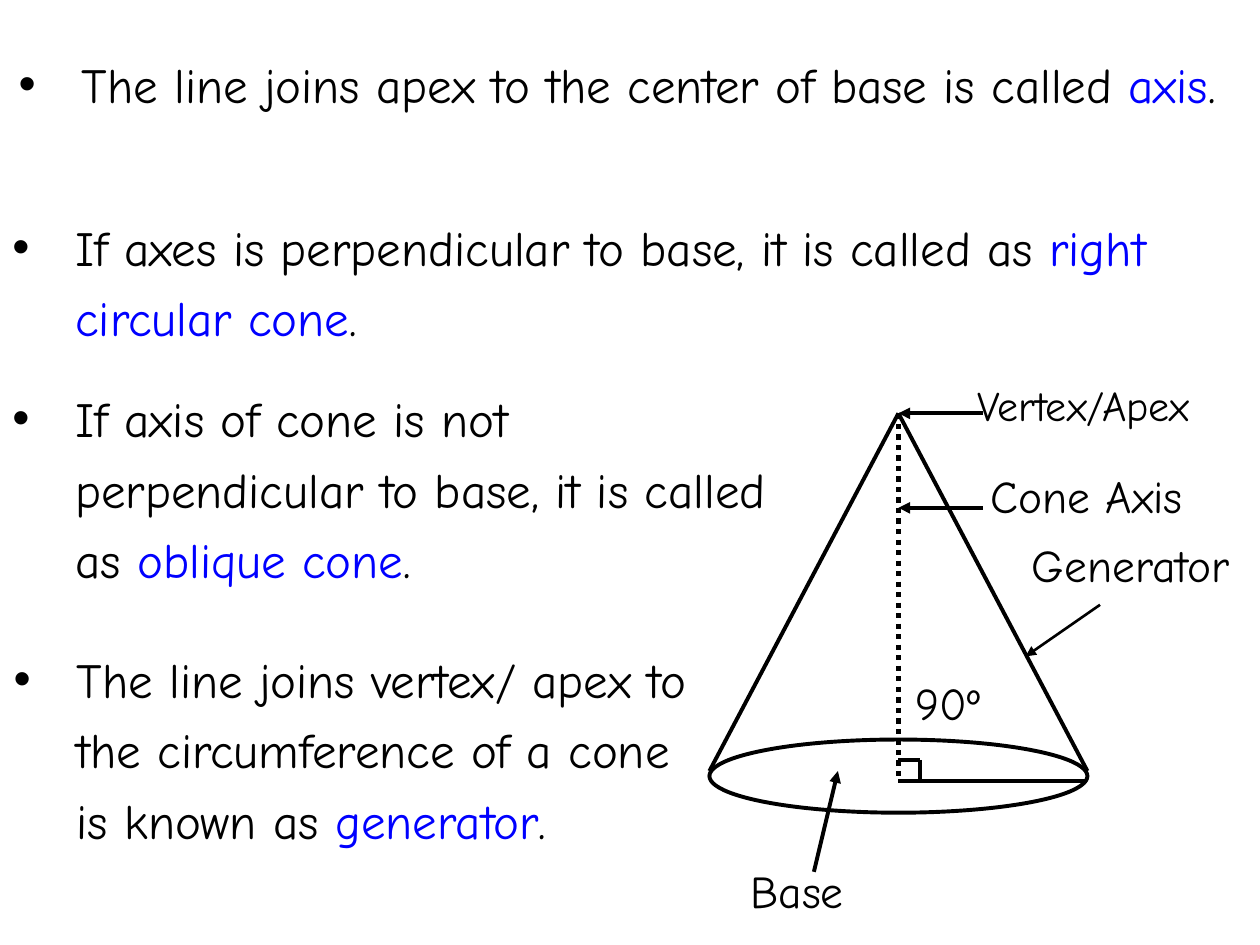
import pptx
import pptx.util
import pptx.dml.color
import pptx.enum.dml
import pptx.enum.shapes
import pptx.enum.text
import pptx.oxml.ns
import lxml.etree

Pt = pptx.util.Pt
BLACK = pptx.dml.color.RGBColor(0, 0, 0)
BLUE = pptx.dml.color.RGBColor(0, 0, 255)
FONT = "Comic Neue"
LEFT = pptx.enum.text.PP_ALIGN.LEFT
CENTER = pptx.enum.text.PP_ALIGN.CENTER

deck = pptx.Presentation()
deck.slide_width, deck.slide_height = Pt(720), Pt(540)
slide = deck.slides.add_slide(deck.slide_layouts[6])


def add_text(box, size, parts, align=LEFT):
    """Add a one-paragraph text box; parts are (text, colour) pairs."""
    frame = slide.shapes.add_textbox(*map(Pt, box)).text_frame
    frame.word_wrap = True
    frame.auto_size = pptx.enum.text.MSO_AUTO_SIZE.SHAPE_TO_FIT_TEXT
    para = frame.paragraphs[0]
    para.alignment = align
    para.font.name, para.font.size = FONT, Pt(size)
    for text, color in parts:
        run = para.add_run()
        run.text = text
        run.font.color.rgb = color
    return para


def add_line(start, end, width=2.25, arrow=False):
    line = slide.shapes.add_connector(
        pptx.enum.shapes.MSO_CONNECTOR.STRAIGHT, *map(Pt, start + end))
    line.line.color.rgb = BLACK
    line.line.width = Pt(width)
    if arrow:
        lxml.etree.SubElement(line.line._get_or_add_ln(),
                              pptx.oxml.ns.qn("a:tailEnd"), type="triangle")
    lxml.etree.SubElement(line._element.spPr, pptx.oxml.ns.qn("a:effectLst"))
    return line


# Bulleted statements, each ending in a blue term
points = [
    ((3.6, 20.9, 702, 87.8),
     "The line joins apex to the center of base is called ", "axis"),
    ((0, 113.8, 702, 87.8),
     "If axes is perpendicular to base, it is called as ",
     "right circular cone"),
    ((0, 211.7, 456.5, 128.2),
     "If axis of cone is not perpendicular to base, it is called as ",
     "oblique cone"),
    ((0.7, 360.7, 404.6, 168.5),
     "The line joins vertex/ apex to the circumference of a cone"
     " is known as ", "generator"),
]
for box, text, term in points:
    para = add_text(box, 28, [(text, BLACK), (term, BLUE), (".", BLACK)])
    para.line_spacing = 1.2
    props = para._p.get_or_add_pPr()
    props.set("marL", str(Pt(36)))
    props.set("indent", str(Pt(-36)))
    bullet_font = lxml.etree.Element(pptx.oxml.ns.qn("a:buFont"),
                                     typeface="Arial")
    bullet = lxml.etree.Element(pptx.oxml.ns.qn("a:buChar"), char="•")
    spot = props.index(props.find(pptx.oxml.ns.qn("a:lnSpc"))) + 1
    props[spot:spot] = [bullet_font, bullet]

# Cone
mid, top, foot = 513.4, 236.2, 446.4
rad, rim = 108, 440.6
base = slide.shapes.add_shape(
    pptx.enum.shapes.MSO_SHAPE.OVAL,
    Pt(mid - rad), Pt(422.6), Pt(2 * rad), Pt(41.8))
base.shadow.inherit = False
base.fill.background()
base.line.color.rgb = BLACK
base.line.width = Pt(2.25)
for side in (-rad, rad):
    add_line((mid, top), (mid + side, rim))
axis = add_line((mid, top), (mid, foot), 3)
axis.line.dash_style = pptx.enum.dml.MSO_LINE.ROUND_DOT

# Radius and right-angle mark
mark = 12.2
add_line((mid, foot), (mid + rad, foot))
add_line((mid, foot - mark), (mid + mark, foot - mark))
add_line((mid + mark, foot - mark), (mid + mark, foot))

# Pointers
add_line((561.6, top), (mid, top), arrow=True)
add_line((561.6, 290.2), (mid, 290.2), arrow=True)
add_line((628.6, 345.6), (586.1, 375.1), 1.5, arrow=True)
add_line((465.1, 498.2), (478.8, 440.6), arrow=True)

# Labels
labels = [
    ("Vertex/Apex", (551.5, 213.1, 170.6, 44.6), 24, LEFT),
    ("Cone Axis", (547.2, 264.2, 147.6, 47.5), 26, CENTER),
    ("Generator", (582.5, 303.1, 139, 47.5), 26, LEFT),
    ("90º", (511.9, 382.3, 59.8, 47.5), 26, CENTER),
    ("Base", (405.4, 489.6, 100.1, 47.5), 26, CENTER),
]
for text, box, size, align in labels:
    add_text(box, size, [(text, BLACK)], align)

deck.save("out.pptx")
